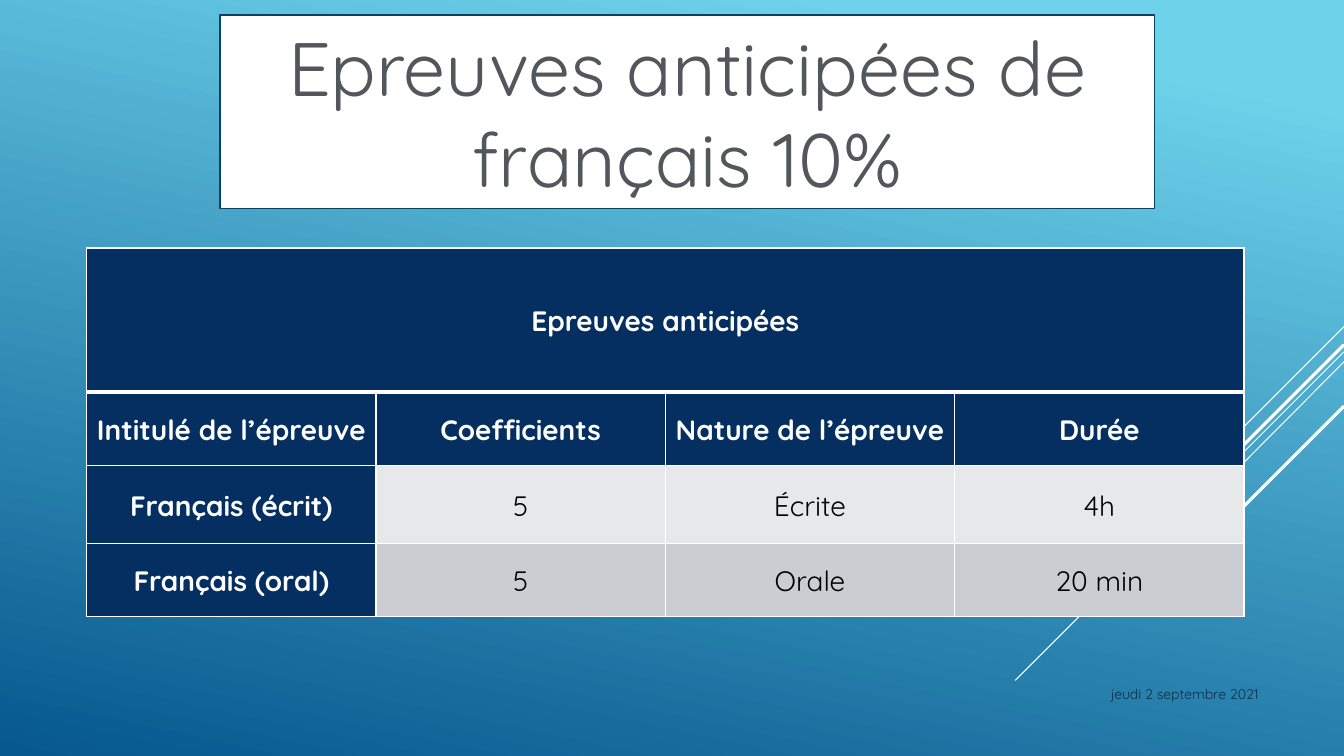
from dataclasses import dataclass

from lxml import etree
from pptx import Presentation
from pptx import util as u
from pptx.dml.color import RGBColor
from pptx.enum import shapes, text
from pptx.oxml import ns

PX = 9144


@dataclass(frozen=True)
class Theme:
    """Colours, font and type sizes of the slide."""
    font: str = "Quicksand"
    white: str = "FFFFFF"
    black: str = "000000"
    sky: str = "6ED2EB"
    deep: str = "06588E"
    navy: str = "052F61"
    edge: str = "054361"
    grey: str = "53575C"
    ink: str = "0A304A"
    pale: str = "E7E8EA"
    mid: str = "CCCDD2"
    title: int = 54
    body: int = 20
    small: int = 10


T = Theme()
RAYS = [
    (324, 1233, 424, 0.75),
    (349, 1007, 675, 0.75),
    (359, 1126, 567, 0.75),
    (342, 1142, 533, 2.25),
    (403, 1194, 542, 2.25),
]
ROWS = [
    ["Epreuves anticipées", "", "", ""],
    ["Intitulé de l’épreuve", "Coefficients", "Nature de l’épreuve", "Durée"],
    ["Français (écrit)", "5", "Écrite", "4h"],
    ["Français (oral)", "5", "Orale", "20 min"],
]
HIGH = [143, 73, 77, 73]
BANDS = [T.navy, T.navy, T.pale, T.mid]


def box(*dims):
    """Turn px lengths into EMU."""
    return [u.Emu(n * PX) for n in dims]


def tint(name):
    """Make a colour from its hex name."""
    return RGBColor.from_string(name)


def write(frame, words, size, color, align="CENTER", bold=False, lead=None, after=None):
    """Put one formatted paragraph in a text frame."""
    frame.word_wrap = True
    para = frame.paragraphs[0]
    para.alignment = getattr(text.PP_ALIGN, align)
    para.line_spacing = lead
    para.space_after = after
    run = para.add_run()
    run.text = words
    run.font.name = T.font
    run.font.size = u.Pt(size)
    run.font.bold = bold
    run.font.color.rgb = tint(color)


def paint(slide):
    """Fill the background with the blue gradient."""
    fill = slide.background.fill
    fill.gradient()
    fill.gradient_angle = 258
    for stop, color, at in zip(fill.gradient_stops, (T.sky, T.deep), (0.1, 1)):
        stop.color.rgb = tint(color)
        stop.position = at


def ray(slide, top, left, low, width):
    """Draw one slanted line from the right edge."""
    line = slide.shapes.add_connector(
        shapes.MSO_CONNECTOR.STRAIGHT, *box(1333, top, left, low))
    line.line.color.rgb = tint(T.white)
    line.line.width = u.Pt(width)
    etree.SubElement(line._element.spPr, ns.qn("a:effectLst"))


def title(slide, words):
    """Add the white title panel."""
    panel = slide.shapes.add_shape(
        shapes.MSO_SHAPE.RECTANGLE, *box(218, 15, 927, 192))
    panel.shadow.inherit = False
    panel.fill.solid()
    panel.fill.fore_color.rgb = tint(T.white)
    panel.line.color.rgb = tint(T.edge)
    panel.line.width = u.Pt(1.25)
    panel.text_frame.vertical_anchor = text.MSO_ANCHOR.MIDDLE
    write(panel.text_frame, words, T.title, T.grey)


def border(cell, low):
    """Give a cell white borders, with its own bottom width."""
    props = cell._tc.get_or_add_tcPr()
    for i, (side, width) in enumerate(zip("LRTB", (1, 1, 1, low))):
        line = etree.Element(ns.qn("a:ln" + side), w=str(u.Pt(width)))
        fill = etree.SubElement(line, ns.qn("a:solidFill"))
        etree.SubElement(fill, ns.qn("a:srgbClr"), val=T.white)
        props.insert(i, line)


def grid(slide):
    """Add the table of exams."""
    table = slide.shapes.add_table(
        len(ROWS), len(ROWS[0]), *box(86, 246, 1148, sum(HIGH))).table
    for col in table.columns:
        col.width = u.Emu(287 * PX)
    for r, row in enumerate(ROWS):
        table.rows[r].height = u.Emu(HIGH[r] * PX)
        for c, words in enumerate(row):
            cell = table.cell(r, c)
            head = r < 2 or c == 0
            cell.fill.solid()
            cell.fill.fore_color.rgb = tint(T.navy if head else BANDS[r])
            border(cell, 1 if r else 3)
            cell.vertical_anchor = text.MSO_ANCHOR.MIDDLE
            cell.margin_left, cell.margin_right = box(7, 7)
            cell.margin_top = cell.margin_bottom = 0
            if words:
                write(cell.text_frame, words, T.body, T.white if head else T.black,
                      bold=head, lead=1.07, after=u.Pt(8))
    table.cell(0, 0).merge(table.cell(0, len(ROWS[0]) - 1))


def main():
    """Build and save the slide."""
    deck = Presentation()
    deck.slide_width, deck.slide_height = box(1333, 750)
    slide = deck.slides.add_slide(deck.slide_layouts[6])
    paint(slide)
    for item in RAYS:
        ray(slide, *item)
    date = slide.shapes.add_textbox(*box(1083, 675, 175, 40))
    write(date.text_frame, "jeudi 2 septembre 2021", T.small, T.ink, align="RIGHT")
    title(slide, "Epreuves anticipées de français 10%")
    grid(slide)
    deck.save("out.pptx")


if __name__ == "__main__":
    main()
